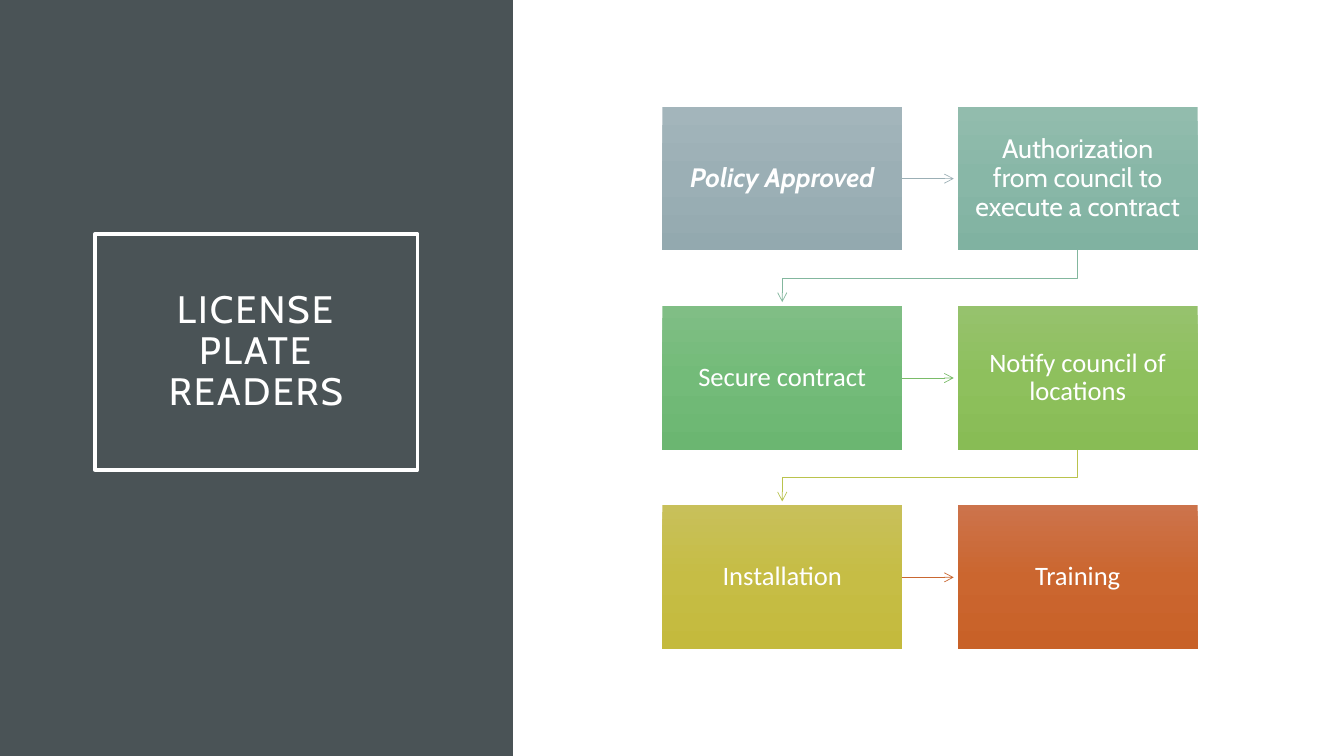
from copy import deepcopy
from dataclasses import dataclass

from lxml.etree import SubElement
from pptx import Presentation
from pptx.dml.color import RGBColor
from pptx.enum.shapes import MSO_CONNECTOR as Link, MSO_SHAPE as Preset
from pptx.enum.text import MSO_ANCHOR as Anchor, MSO_AUTO_SIZE as Fit, PP_ALIGN as Align
from pptx.oxml.ns import qn
from pptx.util import Cm, Pt


@dataclass(frozen=True)
class Box:
    """Area in centimetres."""
    left: float
    top: float
    width: float
    height: float

    def lengths(self):
        """Return the four lengths as slide units."""
        return [Cm(self.left), Cm(self.top), Cm(self.width), Cm(self.height)]


@dataclass(frozen=True)
class Theme:
    """Colours, fonts and type sizes of the deck."""
    panel: str = "4A5356"
    light: str = "FFFFFF"
    heading_font: str = "Cabin"
    body_font: str = "Calibri"
    title_size: float = 27.3
    step_size: float = 19
    frame_width: float = 2.5
    arrow_width: float = 0.5


THEME = Theme()

STEPS = [
    ("Policy Approved", ("A3B5BB", "9BAFB5", "93A9AF"), dict(font=THEME.heading_font, bold=True, italic=True)),
    ("Authorization from council to execute a contract", ("92BCAD", "88B7A7", "80B2A1"),
     dict(font=THEME.heading_font)),
    ("Secure contract", ("80BE85", "73BB79", "6BB671"), {}),
    ("Notify council of locations", ("96C26D", "8EC05D", "88BC55"), {}),
    ("Installation", ("C8C05A", "C6BD45", "C4BA3D"), {}),
    ("Training", ("CC734B", "CB662F", "C86128"), {}),
]
ARROW_COLOURS = ["9BAFB5", "83B79E", "7ABC69", "BAC34D", "C96731"]


def write_text(shape, text, font=THEME.body_font, size=THEME.step_size, bold=False,
               italic=False, margin=0.38, tracking=0):
    """Write centred light text into a shape."""
    frame = shape.text_frame
    frame.word_wrap = True
    frame.auto_size = Fit.NONE
    frame.vertical_anchor = Anchor.MIDDLE
    frame.margin_left = frame.margin_right = frame.margin_top = frame.margin_bottom = Cm(margin)
    para = frame.paragraphs[0]
    para.alignment = Align.CENTER
    para.line_spacing = 0.9
    span = para.add_run()
    span.text = text
    span.font.name = font
    span.font.size = Pt(size)
    span.font.bold = bold
    span.font.italic = italic
    span.font.color.rgb = RGBColor.from_string(THEME.light)
    if tracking:
        span.font._element.set("spc", str(round(tracking * 100)))


def add_rectangle(page, box):
    """Add a rectangle without outline or shadow."""
    shape = page.shapes.add_shape(Preset.RECTANGLE, *box.lengths())
    shape.shadow.inherit = False
    shape.line.fill.background()
    return shape


def fill_downwards(shape, colours):
    """Fill a shape with an even three-colour gradient from top to bottom."""
    shape.fill.gradient()
    shape.fill.gradient_angle = 270
    first = shape.element.spPr.find(f".//{qn('a:gs')}")
    first.addnext(deepcopy(first))
    for stop, colour, position in zip(shape.fill.gradient_stops, colours, (0, 0.5, 1)):
        stop.color.rgb = RGBColor.from_string(colour)
        stop.position = position


def style_arrow(arrow, colour):
    """Give a line its colour, width and open arrowhead, without shadow."""
    arrow.line.color.rgb = RGBColor.from_string(colour)
    arrow.line.width = Pt(THEME.arrow_width)
    properties = arrow.element.spPr
    SubElement(properties.find(qn("a:ln")), qn("a:tailEnd"), type="arrow")
    SubElement(properties, qn("a:effectLst"))


def add_row_arrow(page, source, target, clearance):
    """Add a straight arrow to the next step in the row."""
    middle = source.top + source.height // 2
    arrow = page.shapes.add_connector(Link.STRAIGHT, source.left + source.width, middle,
                                      target.left - clearance, middle)
    arrow.begin_connect(source, 3)
    return arrow


def add_return_arrow(page, source, target, clearance):
    """Add an angled arrow to the first step of the next row."""
    start_x = source.left + source.width // 2
    end_x = target.left + target.width // 2
    start_y = source.top + source.height
    turn_y = (start_y + target.top) // 2
    outline = page.shapes.build_freeform(start_x, start_y)
    outline.add_line_segments([(start_x, turn_y), (end_x, turn_y), (end_x, target.top - clearance)],
                              close=False)
    arrow = outline.convert_to_shape()
    arrow.fill.background()
    return arrow


def add_title_panel(page, box):
    """Add the dark panel with the framed title."""
    panel = add_rectangle(page, box)
    panel.fill.solid()
    panel.fill.fore_color.rgb = RGBColor.from_string(THEME.panel)
    title = page.shapes.title
    title.element.addprevious(panel.element)
    frame = Box(box.left + 2.39, box.top + 5.9, 8.13, 5.94)
    title.left, title.top, title.width, title.height = frame.lengths()
    title.line.color.rgb = RGBColor.from_string(THEME.light)
    title.line.width = Pt(THEME.frame_width)
    write_text(title, "LICENSE PLATE READERS", font=THEME.heading_font,
               size=THEME.title_size, margin=0.51, tracking=1.5)


def add_process(page, box, columns=2, gap=1.4):
    """Add the steps row by row and join them with arrows."""
    rows = len(STEPS) // columns
    width = (box.width - gap * (columns - 1)) / columns
    height = (box.height - gap * (rows - 1)) / rows
    steps = []
    for index, (text, colours, style) in enumerate(STEPS):
        row, column = divmod(index, columns)
        step = add_rectangle(page, Box(box.left + column * (width + gap),
                                       box.top + row * (height + gap), width, height))
        fill_downwards(step, colours)
        write_text(step, text, **style)
        steps.append(step)
    for index, colour in enumerate(ARROW_COLOURS):
        row_ends = (index + 1) % columns == 0
        add_arrow = add_return_arrow if row_ends else add_row_arrow
        style_arrow(add_arrow(page, steps[index], steps[index + 1], Cm(0.1)), colour)


def main():
    """Build and save the deck."""
    deck = Presentation()
    deck.slide_width, deck.slide_height = Cm(33.87), Cm(19.05)
    page = deck.slides.add_slide(deck.slide_layouts[5])
    add_title_panel(page, Box(0, 0, 12.93, 19.05))
    add_process(page, Box(16.69, 2.69, 13.49, 13.67))
    deck.save("out.pptx")


if __name__ == "__main__":
    main()
